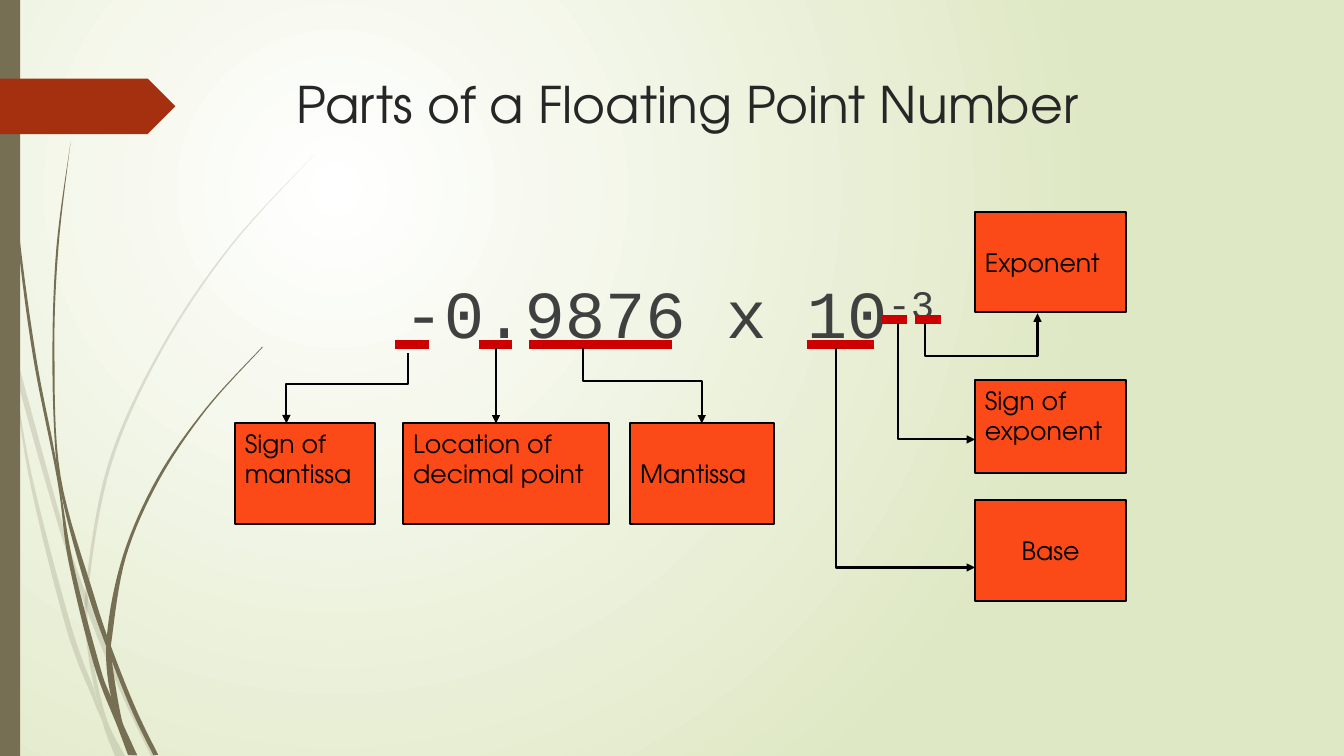
from lxml import etree
from pptx import Presentation
from pptx.dml.color import RGBColor
from pptx.enum.shapes import MSO_CONNECTOR as CONN, MSO_SHAPE as SHAPE
from pptx.enum.text import MSO_ANCHOR as ANCHOR, MSO_AUTO_SIZE as AUTO, PP_ALIGN as ALIGN
from pptx.oxml.ns import qn
from pptx.util import Inches, Pt

COLORS = {"white": "FFFFFF", "green": "DFE8C4", "olive": "766F54", "ribbon": "A53010",
          "title": "262626", "body": "404040", "mark": "CC0000", "label": "FB4A18",
          "black": "000000"}
SANS, MONO = "TeX Gyre Adventor", "Courier New"

# Each stem is one closed outline: down the left edge, then up the right edge
FAINT_STEMS = [
    ([(0, 2.99), (0.1, 3.44), (0.28, 4.7), (0.65, 6.21), (0.92, 6.93), (1.01, 7.14)],
     [(0.93, 6.83), (0.7, 6.19), (0.31, 4.69), (0.11, 3.5), (0, 2.82)]),
    ([(0.14, 3.45), (0.17, 3.76), (0.58, 5.22), (0.88, 6.1), (1.23, 6.94), (1.5, 7.5)],
     [(1.55, 7.5), (1.27, 6.92), (0.88, 5.96), (0.62, 5.2), (0.14, 3.45)]),
    ([(3.12, 1.53), (2.28, 2.44), (1.58, 3.48), (1.07, 4.61), (0.85, 5.84), (0.87, 6.46),
      (1.01, 7.14), (1.14, 7.5)],
     [(1.24, 7.5), (1.05, 7.11), (0.91, 6.46), (0.88, 5.84), (1.1, 4.62), (1.6, 3.49),
      (2.29, 2.45), (3.12, 1.53)]),
]
DARK_STEMS = [
    ([(0.03, 0), (0.07, 1.1), (0.17, 2.33), (0.33, 3.55), (0.57, 4.77), (0.68, 5.57),
      (0.93, 6.59), (1.17, 7.22), (1.27, 7.49)],
     [(1.36, 7.49), (1.1, 6.91), (0.98, 6.57), (0.72, 5.56), (0.55, 4.53), (0.36, 3.55),
      (0.19, 2.32), (0.08, 1.09), (0.04, 0)]),
    ([(0.7, 1.41), (0.56, 2.45), (0.52, 3.49), (0.55, 4.49), (0.64, 5.05), (0.88, 5.92),
      (1.11, 6.56), (1.32, 7.08), (1.52, 7.49)],
     [(1.57, 7.49), (1.36, 7.06), (1.13, 6.49), (0.93, 5.9), (0.6, 4.72), (0.54, 3.49),
      (0.58, 2.45), (0.7, 1.41)]),
    ([(2.6, 3.44), (2.04, 4.05), (1.56, 4.74), (1.22, 5.51), (1.06, 6.31), (1.1, 6.91),
      (1.3, 7.49)],
     [(1.36, 7.49), (1.22, 7.19), (1.11, 6.56), (1.11, 6.33), (1.25, 5.52), (1.58, 4.76),
      (2.05, 4.06), (2.61, 3.44)]),
]

# Diagram parts, measured from the diagram's top left corner
UNDERLINES = [(1.92, 2.25, 1.42), (2.75, 3.08, 1.42), (3.25, 4.67, 1.42),
              (6, 6.67, 1.42), (6.75, 7, 1.17), (7.08, 7.33, 1.17)]
LABELS = [
    ("Sign of\vmantissa", (0.33, 2.2, 1.39, 1), ANCHOR.TOP, ALIGN.LEFT),
    ("Location of\vdecimal point", (2, 2.2, 2.04, 1), ANCHOR.TOP, ALIGN.LEFT),
    ("Mantissa", (4.25, 2.2, 1.43, 1), ANCHOR.MIDDLE, ALIGN.LEFT),
    ("Exponent", (7.67, 0.1, 1.5, 1), ANCHOR.MIDDLE, ALIGN.LEFT),
    ("Sign of\vexponent", (7.67, 1.77, 1.5, 0.92), ANCHOR.TOP, ALIGN.LEFT),
    ("Base", (7.67, 2.96, 1.5, 1), ANCHOR.MIDDLE, ALIGN.CENTER),
]
# Arrows start at the label, where the arrowhead is
ARROWS = [
    [(0.84, 2.2), (0.84, 1.81), (2.05, 1.81), (2.05, 1.5)],
    [(2.92, 2.2), (2.92, 1.45)],
    [(4.96, 2.2), (4.96, 1.78), (3.78, 1.78), (3.78, 1.45)],
    [(7.67, 3.63), (6.29, 3.63), (6.29, 1.45)],
    [(7.67, 2.36), (6.91, 2.36), (6.91, 1.2)],
    [(8.29, 1.11), (8.29, 1.53), (7.17, 1.53), (7.17, 1.2)],
]


def rgb(name):
    return RGBColor.from_string(COLORS[name])


def set_all(obj, values):
    for name, value in values.items():
        setattr(obj, name, value)


def style_runs(p, font, size, color):
    for r in p.runs:
        set_all(r.font, {"name": font, "size": Pt(size)})
        r.font.color.rgb = rgb(color)


def paint(sp, fill=None, line=None, width=1.5):
    sp.shadow.inherit = False
    if fill:
        sp.fill.solid()
        sp.fill.fore_color.rgb = rgb(fill)
    else:
        sp.fill.background()
    if line:
        sp.line.color.rgb = rgb(line)
        sp.line.width = Pt(width)
    else:
        sp.line.fill.background()


def add_path(s, points, close):
    pts = [(Inches(x), Inches(y)) for x, y in points]
    builder = s.shapes.build_freeform(*pts[0])
    builder.add_line_segments(pts[1:], close=close)
    return builder.convert_to_shape()


def add_line(s, start, end, color, width):
    line = s.shapes.add_connector(CONN.STRAIGHT, *[Inches(v) for v in (*start, *end)])
    line.line.color.rgb = rgb(color)
    line.line.width = Pt(width)
    etree.SubElement(line.element.find(qn("p:spPr")), qn("a:effectLst"))
    return line


def smooth_edge(points, steps=8):
    """Catmull-Rom curve through the points."""
    ends = [points[0], *points, points[-1]]
    curve = [points[0]]
    for a, b, c, d in zip(ends, ends[1:], ends[2:], ends[3:]):
        for i in range(1, steps + 1):
            t = i / steps
            curve.append(tuple(
                (2 * q + (r - p) * t + (2 * p - 5 * q + 4 * r - u) * t ** 2
                 + (3 * q - p - 3 * r + u) * t ** 3) / 2
                for p, q, r, u in zip(a, b, c, d)))
    return curve


def add_background(s):
    fill = s.background.fill
    fill.gradient()
    for stop, color, pos in zip(fill.gradient_stops, ("white", "green"), (0, 1)):
        stop.color.rgb = rgb(color)
        stop.position = pos
    grad = s.element.find(".//" + qn("a:gradFill"))
    grad.remove(grad.find(qn("a:lin")))
    circle = etree.SubElement(grad, qn("a:path"), path="circle")
    etree.SubElement(circle, qn("a:fillToRect"), l="50000", t="50000", r="100000", b="100000")


def add_decoration(s, x, y, h):
    # Grass stems
    for stems, alpha in ((FAINT_STEMS, 20), (DARK_STEMS, 100)):
        for left, right in stems:
            outline = smooth_edge(left) + smooth_edge(right)
            sp = add_path(s, [(x + px, y + py) for px, py in outline], True)
            paint(sp, "olive")
            if alpha < 100:
                color = sp.element.find(".//" + qn("a:srgbClr"))
                etree.SubElement(color, qn("a:alpha"), val=str(alpha * 1000))
    # Side bar and ribbon
    for kind, box, color in ((SHAPE.RECTANGLE, (x, y, 0.2, h), "olive"),
                             (SHAPE.PENTAGON, (x, y + 0.78, 1.74, 0.55), "ribbon")):
        paint(s.shapes.add_shape(kind, *[Inches(v) for v in box]), color)


def place_text(sp, box, align):
    set_all(sp, dict(zip(("left", "top", "width", "height"), map(Inches, box))))
    tf = sp.text_frame
    set_all(tf, {"word_wrap": True, "auto_size": AUTO.NONE, "vertical_anchor": ANCHOR.TOP})
    p = tf.paragraphs[0]
    p.alignment = align
    return p


def add_title(s, box):
    p = place_text(s.shapes.title, box, ALIGN.LEFT)
    p.text = "Parts of a Floating Point Number"
    style_runs(p, SANS, 36, "title")


def add_number(s, box):
    p = place_text(s.placeholders[1], box, ALIGN.CENTER)
    for text in ("-0.9876 x 10", "-3"):
        r = p.add_run()
        r.text = text
    style_runs(p, MONO, 48, "body")
    r.font._element.set("baseline", "30000")
    p.space_before = Pt(9)
    pPr = p._p.get_or_add_pPr()
    for name, value in (("marL", 0.38), ("indent", -0.38)):
        pPr.set(name, str(Inches(value)))
    etree.SubElement(pPr, qn("a:buNone"))


def add_diagram(s, x, y):
    # Red underlines
    for x1, x2, level in UNDERLINES:
        add_line(s, (x + x1, y + level), (x + x2, y + level), "mark", 6)
    # Labels
    for text, (dx, dy, w, h), anchor, align in LABELS:
        sp = s.shapes.add_shape(SHAPE.RECTANGLE, *map(Inches, (x + dx, y + dy, w, h)))
        paint(sp, "label", "black")
        tf = sp.text_frame
        set_all(tf, {"word_wrap": False, "vertical_anchor": anchor})
        p = tf.paragraphs[0]
        set_all(p, {"text": text, "alignment": align})
        style_runs(p, SANS, 18, "black")
    # Arrows
    for route in ARROWS:
        pts = [(x + px, y + py) for px, py in route]
        if len(pts) == 2:
            sp = add_line(s, *pts, "black", 1.5)
        else:
            sp = add_path(s, pts, False)
            paint(sp, line="black")
        etree.SubElement(sp.element.find(".//" + qn("a:ln")), qn("a:headEnd"), type="triangle")


def main():
    prs = Presentation()
    set_all(prs, {"slide_width": Inches(13.33), "slide_height": Inches(7.5)})
    s = prs.slides.add_slide(prs.slide_layouts[1])
    add_background(s)
    add_decoration(s, 0, 0, 7.5)
    add_title(s, (2.84, 0.68, 9.75, 1.4))
    add_number(s, (1.76, 2.64, 9.75, 4.13))
    add_diagram(s, 2, 2)
    prs.save("out.pptx")


if __name__ == "__main__":
    main()
